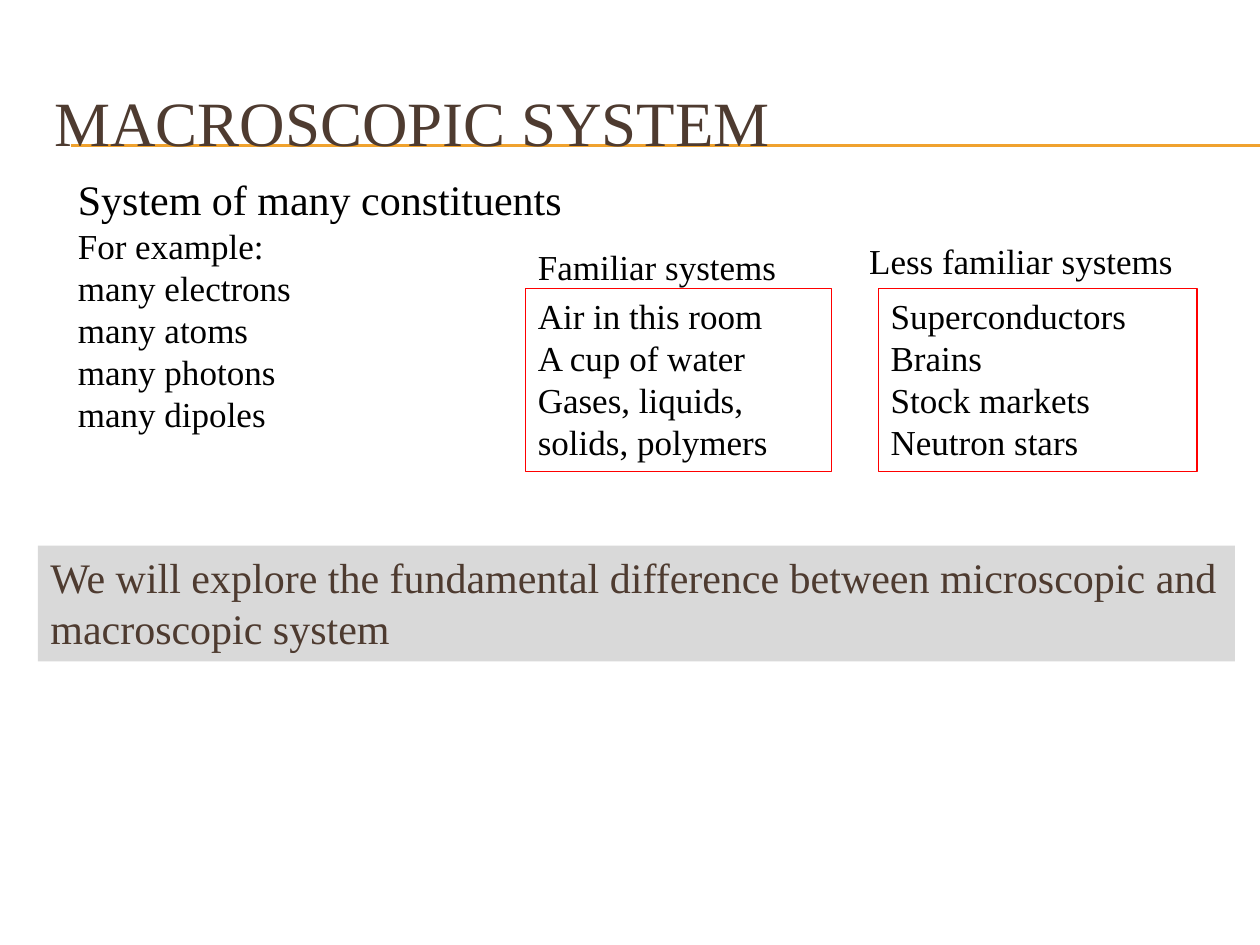
from lxml import etree
from pptx import Presentation
from pptx.dml.color import RGBColor
from pptx.enum.shapes import MSO_CONNECTOR as Connector
from pptx.enum.text import MSO_ANCHOR as Anchor, MSO_AUTO_SIZE as AutoSize, PP_ALIGN as Align
from pptx.oxml.ns import qn
from pptx.util import Inches, Pt

COLORS = {"title": "4E3B30", "text": "000000", "rule": "F0A22E",
          "frame": "FF0000", "band": "D9D9D9"}
FONT = "Times New Roman"


def rgb(name):
    return RGBColor.from_string(COLORS[name])


class SlideBuilder:
    def __init__(self, slide):
        self.slide = slide

    def place(self, shape, left, top, width, height):
        shape.left, shape.top = Inches(left), Inches(top)
        shape.width, shape.height = Inches(width), Inches(height)

    def style(self, paragraph, size, color):
        paragraph.alignment = Align.LEFT
        for run in paragraph.runs:
            run.font.name = FONT
            run.font.size = Pt(size)
            run.font.color.rgb = rgb(color)

    def rule(self, y):
        line = self.slide.shapes.add_connector(
            Connector.STRAIGHT, Inches(0.56), Inches(y), Inches(10), Inches(y))
        line.line.color.rgb = rgb("rule")
        line.line.width = Pt(0.75)
        element = line._element
        etree.SubElement(element.spPr, qn("a:effectLst"))
        element.getparent().insert(2, element)  # behind the title

    def placeholder(self, shape, text, box, size, anchor):
        self.place(shape, *box)
        frame = shape.text_frame
        frame.text = text
        frame.word_wrap = True
        frame.auto_size = AutoSize.NONE
        frame.vertical_anchor = anchor
        self.style(frame.paragraphs[0], size, "title")

    def title(self, text, box):
        self.placeholder(self.slide.shapes.title, text, box, 36, Anchor.MIDDLE)

    def statement(self, text, box):
        body = self.slide.placeholders[1]
        self.placeholder(body, text, box, 24, Anchor.TOP)
        body.fill.solid()
        body.fill.fore_color.rgb = rgb("band")
        # Plain paragraph without bullet or hanging indent
        properties = body.text_frame.paragraphs[0]._p.get_or_add_pPr()
        properties.set("marL", "0")
        properties.set("indent", "0")
        etree.SubElement(properties, qn("a:buNone"))

    def text(self, lines, box, first_size=20, framed=False, wrap=True):
        shape = self.slide.shapes.add_textbox(*map(Inches, box))
        frame = shape.text_frame
        frame.text = "\n".join(lines)
        frame.word_wrap = wrap
        frame.auto_size = AutoSize.SHAPE_TO_FIT_TEXT
        for index, paragraph in enumerate(frame.paragraphs):
            self.style(paragraph, 20 if index else first_size, "text")
        if framed:
            shape.line.color.rgb = rgb("frame")
            shape.line.width = Pt(0.75)


def main():
    prs = Presentation()
    prs.slide_width, prs.slide_height = Inches(10), Inches(7.5)
    builder = SlideBuilder(prs.slides.add_slide(prs.slide_layouts[1]))

    # Heading with its double rule
    for y in (1.15, 1.16):
        builder.rule(y)
    builder.title("MACROSCOPIC SYSTEM", (0.33, 0.5, 9.5, 0.92))

    # Closing statement
    builder.statement("We will explore the fundamental difference between "
                      "microscopic and macroscopic system", (0.3, 4.33, 9.5, 0.92))

    # Definition and examples
    builder.text(["System of many constituents", "For example:", "many electrons",
                  "many atoms", "many photons", "many dipoles"],
                 (0.52, 1.33, 4.06, 2.52), first_size=24)

    # Headings of the two groups
    builder.text(["Familiar systems"], (4.17, 1.9, 2.1, 0.44), wrap=False)
    builder.text(["Less familiar systems"], (6.8, 1.85, 3, 0.44))

    # Framed lists
    builder.text(["Superconductors", "Brains", "Stock markets", "Neutron stars"],
                 (6.97, 2.29, 2.53, 1.45), framed=True)
    builder.text(["Air in this room", "A cup of water", "Gases, liquids, solids, polymers"],
                 (4.17, 2.29, 2.43, 1.45), framed=True)

    prs.save("out.pptx")


if __name__ == "__main__":
    main()
